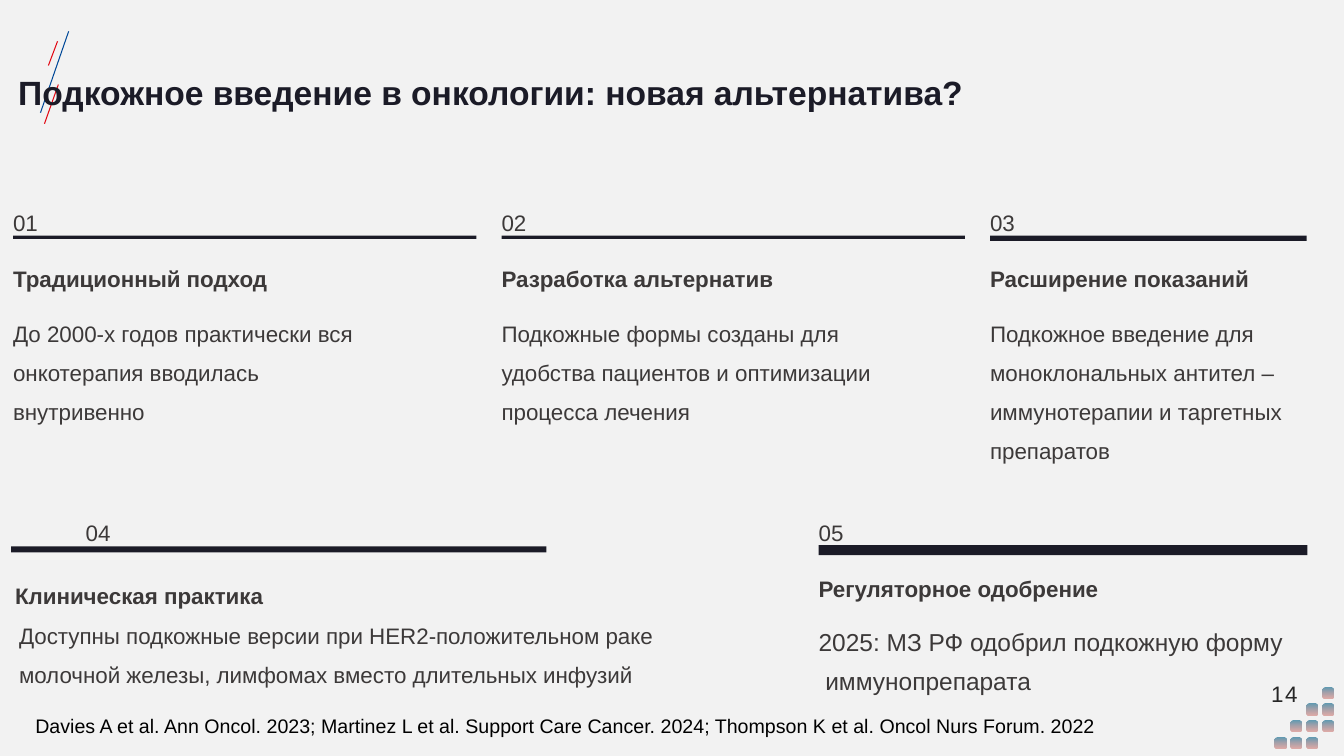
from dataclasses import dataclass
from itertools import product

from lxml.etree import SubElement
from pptx import Presentation
from pptx.dml.color import RGBColor
from pptx.enum.shapes import MSO_CONNECTOR, MSO_SHAPE
from pptx.enum.text import MSO_ANCHOR, PP_ALIGN
from pptx.oxml.ns import qn
from pptx.util import Cm, Pt


@dataclass(frozen=True)
class Theme:
    font: str = "Arial"
    back: str = "F2F2F2"
    dark: str = "1B1B27"
    body: str = "3C3939"
    page: str = "262626"
    black: str = "000000"
    red: str = "E20713"
    blue: str = "004898"
    teal: str = "005F87"
    rust: str = "C3443B"
    title: float = 24
    text: float = 16
    large: float = 17.5
    note: float = 14


THEME = Theme()


def color(code):
    return RGBColor.from_string(code)


def add_text(slide, box, lines, size=THEME.text, tint=THEME.body, bold=False,
             lead=None, wrap=True, inset=(0, 0)):
    """Place text in a box (cm) and return its frame."""
    frame = slide.shapes.add_textbox(*map(Cm, box)).text_frame
    frame.word_wrap = wrap
    frame.margin_left = frame.margin_right = Cm(inset[0])
    frame.margin_top = frame.margin_bottom = Cm(inset[1])
    frame.text = lines
    for para in frame.paragraphs:
        if lead:
            para.line_spacing = Pt(lead)
        font = para.font
        font.name, font.size, font.bold = THEME.font, Pt(size), bold
        font.color.rgb = color(tint)
    return frame


def add_bar(slide, box):
    bar = slide.shapes.add_shape(MSO_SHAPE.RECTANGLE, *map(Cm, box))
    bar.shadow.inherit = False
    bar.fill.solid()
    bar.fill.fore_color.rgb = color(THEME.dark)
    bar.line.fill.background()


def add_line(slide, ends, tint):
    line = slide.shapes.add_connector(MSO_CONNECTOR.STRAIGHT, *map(Cm, ends))
    line.line.color.rgb = color(tint)
    line.line.width = Pt(0.75)
    SubElement(line._element.spPr, qn("a:effectLst"))


def add_dot(slide, left, top):
    dot = slide.shapes.add_shape(MSO_SHAPE.ROUNDED_RECTANGLE,
                                 Cm(left), Cm(top), Cm(0.28), Cm(0.28))
    dot.shadow.inherit = False
    dot.line.fill.background()
    dot.fill.gradient()
    dot.fill.gradient_angle = 270
    looks = ((THEME.teal, 60), (THEME.rust, 40))
    for stop, (tint, alpha) in zip(dot.fill.gradient_stops, looks):
        stop.color.rgb = color(tint)
    # Opacity of each gradient stop
    tints = dot._element.spPr.iter(qn("a:srgbClr"))
    for node, (tint, alpha) in zip(tints, looks):
        SubElement(node, qn("a:alpha"), val=str(alpha * 1000))


def add_step(slide, num, bar, head, body, size=THEME.text):
    """Add a numbered step: number, bar, heading and body."""
    label, at = num
    add_text(slide, (*at, 0.8, 0.76), label, lead=28, wrap=False)
    add_bar(slide, bar)
    label, at = head
    add_text(slide, (*at, 9, 0.97), label, bold=True, lead=27, wrap=False)
    label, box = body
    return add_text(slide, box, label, size, lead=28)


def main():
    deck = Presentation()
    deck.slide_width, deck.slide_height = Cm(33.87), Cm(19.05)
    slide = deck.slides.add_slide(deck.slide_layouts[6])
    slide.background.fill.solid()
    slide.background.fill.fore_color.rgb = color(THEME.back)

    # Slanted lines in the corner
    add_line(slide, (1.22, 1.65, 1.45, 1.04), THEME.red)
    add_line(slide, (1.02, 2.84, 1.73, 0.79), THEME.blue)
    add_line(slide, (1.12, 3.12, 1.47, 2.13), THEME.red)

    # Stair of dots, without its last corner
    for col, row in product(range(4), repeat=2):
        if col + row in (3, 4, 5):
            add_dot(slide, 32.13 + 0.4 * col, 17.32 + 0.42 * row)

    # Page number
    frame = add_text(slide, (31.36, 17.12, 2.01, 0.97), "14", tint=THEME.page,
                     lead=12.5, inset=(0.25, 0.13))
    frame.vertical_anchor = MSO_ANCHOR.MIDDLE
    para = frame.paragraphs[0]
    para.alignment = PP_ALIGN.CENTER
    para.runs[0].font._element.set("spc", "110")

    # Title
    add_text(slide, (0.46, 1.3, 33.25, 1.55),
             "Подкожное введение в онкологии: новая альтернатива?",
             THEME.title, THEME.dark, True, 43.5, False)

    # Upper row of steps
    steps = (
        ("Традиционный подход",
         "До 2000-х годов практически вся онкотерапия вводилась внутривенно",
         11.68, 0.08, 8.79),
        ("Разработка альтернатив",
         "Подкожные формы созданы для удобства пациентов и оптимизации "
         "процесса лечения", 11.68, 0.08, 9.5),
        ("Расширение показаний",
         "Подкожное введение для моноклональных антител – иммунотерапии "
         "и таргетных препаратов", 7.98, 0.13, 7.98),
    )
    for i, (head, body, span, thick, width) in enumerate(steps):
        left = 0.33 + 12.31 * i
        add_step(slide, (f"{i + 1:02}", (left, 4.97)),
                 (left, 5.94, span, thick), (head, (left, 6.4)),
                 (body, (left, 7.75, width, 3.96)))

    # Lower row of steps
    add_step(slide, ("04", (2.16, 12.78)), (0.28, 13.77, 13.49, 0.15),
             ("Клиническая практика", (0.38, 14.4)),
             ("Доступны подкожные версии при HER2-положительном раке молочной "
              "железы, лимфомах вместо длительных инфузий",
              (0.48, 15.37, 17.86, 2.97)))
    frame = add_step(slide, ("05", (20.63, 12.78)), (20.63, 13.74, 12.32, 0.25),
                     ("Регуляторное одобрение", (20.63, 14.22)),
                     ("2025: МЗ РФ одобрил подкожную форму\nиммунопрепарата",
                      (20.63, 15.55, 12.32, 1.98)), THEME.large)
    frame.paragraphs[1]._p.get_or_add_pPr().set("marL", str(Cm(0.17)))

    # Sources
    add_text(slide, (0.64, 17.86, 32.39, 0.86),
             "Davies A et al. Ann Oncol. 2023; Martinez L et al. Support Care "
             "Cancer. 2024; Thompson K et al. Oncol Nurs Forum. 2022",
             THEME.note, THEME.black, inset=(0.25, 0.13))

    deck.save("out.pptx")


if __name__ == "__main__":
    main()
